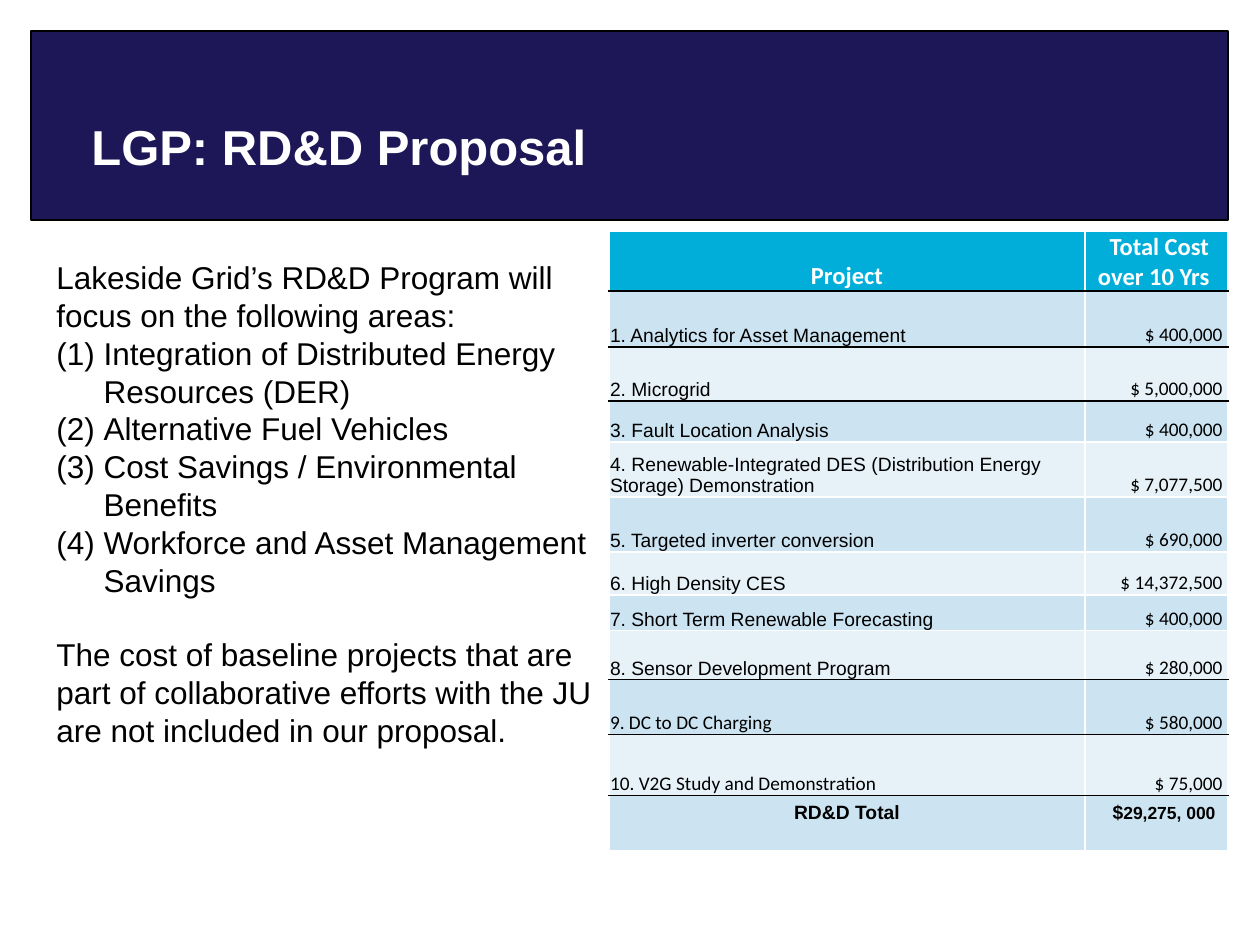
import pptx
import pptx.util
import pptx.dml.color
import pptx.enum.shapes
import pptx.enum.text
import pptx.oxml.ns
import lxml.etree

PX = 914400 / 126
ALIGN = pptx.enum.text.PP_ALIGN
ANCHOR = pptx.enum.text.MSO_ANCHOR


def px(*lengths):
    return [pptx.util.Emu(round(length * PX)) for length in lengths]


def color(value):
    return pptx.dml.color.RGBColor.from_string(value)


presentation = pptx.Presentation()
presentation.slide_width, presentation.slide_height = px(1260, 945)
slide = presentation.slides.add_slide(presentation.slide_layouts[6])

banner = slide.shapes.add_shape(pptx.enum.shapes.MSO_SHAPE.RECTANGLE, *px(31, 31, 1197, 189))
banner.shadow.inherit = False
banner.fill.solid()
banner.fill.fore_color.rgb = color("1D1757")
banner.line.color.rgb = color("000000")
banner.line.width = pptx.util.Pt(0.75)

title = slide.shapes.add_textbox(*px(79, 110, 824, 72))
title.text_frame.word_wrap = True
title.text_frame.vertical_anchor = ANCHOR.BOTTOM
paragraph = title.text_frame.paragraphs[0]
paragraph.text = "LGP: RD&D Proposal"
font = paragraph.runs[0].font
font.name, font.size, font.bold = "Arial", pptx.util.Pt(28), True
font.color.rgb = color("FFFFFF")

body = slide.shapes.add_textbox(*px(44, 252, 564, 547))
body.text_frame.word_wrap = True
body.text_frame.text = "\n".join([
    "Lakeside Grid’s RD&D Program will focus on the following areas:",
    "Integration of Distributed Energy Resources (DER)",
    "Alternative Fuel Vehicles",
    "Cost Savings / Environmental Benefits",
    "Workforce and Asset Management Savings",
    "The cost of baseline projects that are part of collaborative efforts "
    "with the JU are not included in our proposal.",
])
paragraphs = body.text_frame.paragraphs
for paragraph in paragraphs[1:5]:
    properties = paragraph._p.get_or_add_pPr()
    properties.set("marL", "342900")
    properties.set("indent", "-342900")
    number = lxml.etree.SubElement(properties, pptx.oxml.ns.qn("a:buAutoNum"))
    number.set("type", "arabicParenBoth")
paragraphs[-1].space_before = pptx.util.Pt(21)
for paragraph in paragraphs:
    font = paragraph.runs[0].font
    font.name, font.size = "Arial", pptx.util.Pt(18)
    font.color.rgb = color("000000")

rows = [
    (60, " Project ", " Total Cost over 10 Yrs "),
    (56, "1. Analytics for Asset Management", " $ 400,000 "),
    (54, "2. Microgrid", " $ 5,000,000 "),
    (41, "3. Fault Location Analysis", " $ 400,000 "),
    (55, "4. Renewable-Integrated DES (Distribution Energy Storage) Demonstration", " $ 7,077,500 "),
    (55, "5. Targeted inverter conversion", " $ 690,000 "),
    (43, "6. High Density CES", " $ 14,372,500 "),
    (36, "7. Short Term Renewable Forecasting", " $ 400,000 "),
    (49, "8. Sensor Development Program", " $ 280,000 "),
    (55, "9. DC to DC Charging", " $ 580,000 "),
    (61, "10. V2G Study and Demonstration", " $ 75,000 "),
    (55, "RD&D Total", "$"),
]
last = len(rows) - 1
black_rules = {1, 2, 3, 9, 10, 11}
height = sum(row[0] for row in rows)
table = slide.shapes.add_table(len(rows), 2, *px(609, 231, 619, height)).table
table.first_row = table.horz_banding = False
table.columns[0].width, table.columns[1].width = px(476, 143)

for index, (row_height, *texts) in enumerate(rows):
    table.rows[index].height = px(row_height)[0]
    header, total = index == 0, index == last
    for column, text in enumerate(texts):
        cell = table.cell(index, column)
        properties = cell._tc.get_or_add_tcPr()
        top = "000000" if index in black_rules else "FFFFFF"
        bottom = "000000" if index + 1 in black_rules else "FFFFFF"
        for side, value in zip("LRTB", ("FFFFFF", "FFFFFF", top, bottom)):
            line = lxml.etree.SubElement(properties, pptx.oxml.ns.qn("a:ln" + side), w="12700")
            fill = lxml.etree.SubElement(line, pptx.oxml.ns.qn("a:solidFill"))
            lxml.etree.SubElement(fill, pptx.oxml.ns.qn("a:srgbClr"), val=value)
        cell.fill.solid()
        cell.fill.fore_color.rgb = color("00AED9" if header else "CCE3F1" if index % 2 else "E7F2F8")
        if not total:
            cell.vertical_anchor = ANCHOR.BOTTOM
            cell.margin_left, cell.margin_right, cell.margin_top, cell.margin_bottom = px(1, 1, 1, 0)
        paragraph = cell.text_frame.paragraphs[0]
        paragraph.text = text
        if header or total and column == 0:
            paragraph.alignment = ALIGN.CENTER
        else:
            paragraph.alignment = ALIGN.RIGHT if column else ALIGN.LEFT
        if total and column:
            paragraph.add_run().text = "29,275, 000"
        arial = total or column == 0 and 1 <= index <= 8
        for run in paragraph.runs:
            run.font.name = "Arial" if arial else "Calibri"
            run.font.size = pptx.util.Pt(14 if header else 11)
            run.font.bold = header or total
            run.font.color.rgb = color("FFFFFF" if header else "000000")
table.cell(last, 1).text_frame.paragraphs[0].runs[1].font.size = pptx.util.Pt(10)

presentation.save("out.pptx")
